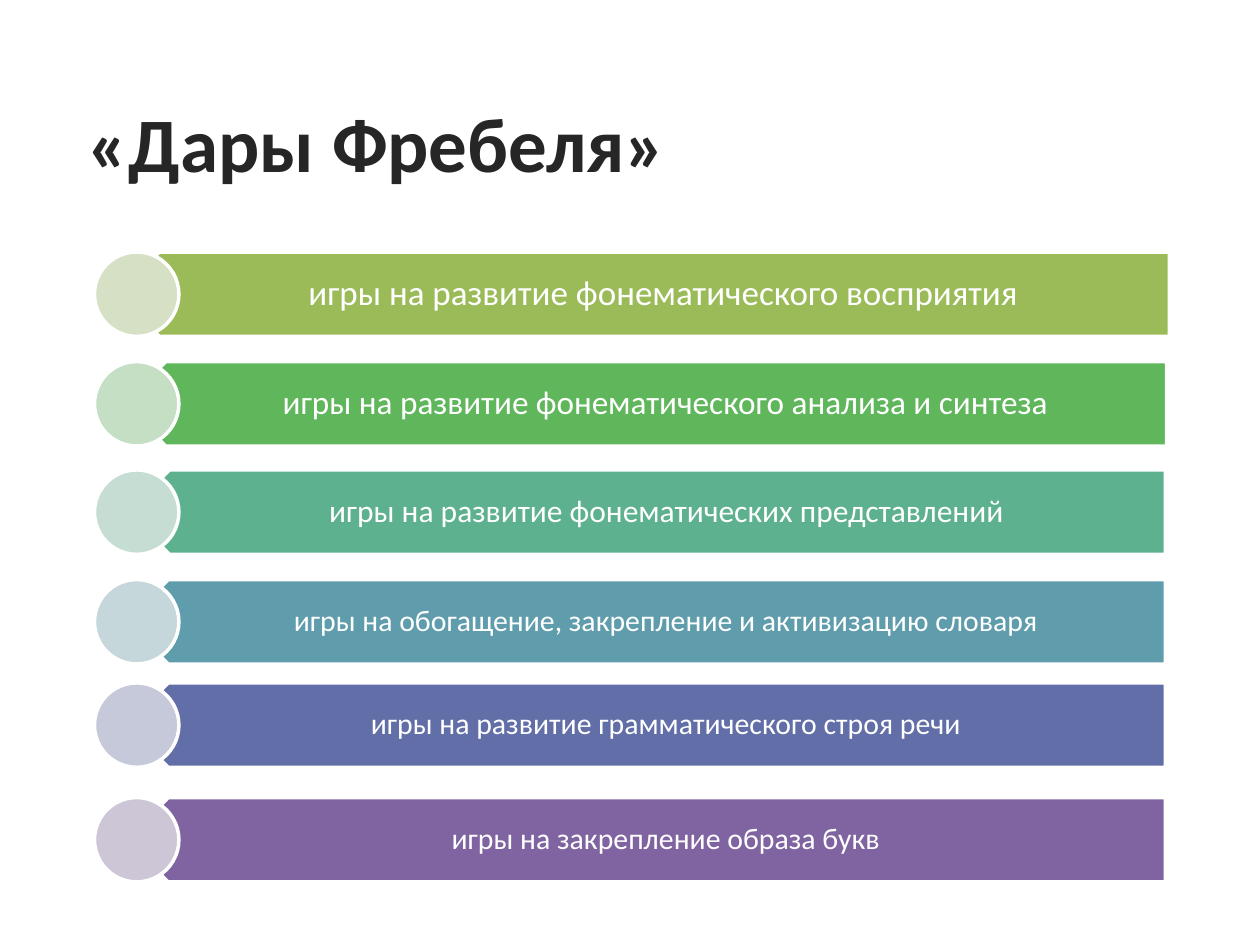
import pptx
import pptx.util
import pptx.dml.color
import pptx.enum.shapes
import pptx.enum.text
from pptx.util import Inches

SHAPES = pptx.enum.shapes.MSO_SHAPE
CENTER = pptx.enum.text.PP_ALIGN.CENTER
MIDDLE = pptx.enum.text.MSO_ANCHOR.MIDDLE


def color(value):
    return pptx.dml.color.RGBColor.from_string(value)


def write(box, text, size, ink, bold, margins):
    frame = box.text_frame
    sides = ("margin_left", "margin_top", "margin_right", "margin_bottom")
    settings = {side: Inches(gap) for side, gap in zip(sides, margins)}
    settings.update(word_wrap=True, vertical_anchor=MIDDLE)
    for name, value in settings.items():
        setattr(frame, name, value)
    para = frame.paragraphs[0]
    para.alignment = CENTER
    span = para.add_run()
    span.text = text
    styles = {"name": "Calibri", "size": pptx.util.Pt(size), "bold": bold}
    for name, value in styles.items():
        setattr(span.font, name, value)
    span.font.color.rgb = color(ink)
    return para


deck = pptx.Presentation()
deck.slide_width, deck.slide_height = Inches(10), Inches(7.5)
page = deck.slides.add_slide(deck.slide_layouts[5])

# Title
title = page.shapes.title
place = {"left": 0.08, "top": 0.5, "width": 5.83, "height": 1.25}
for name, value in place.items():
    setattr(title, name, Inches(value))
write(title, "«Дары Фребеля»", 44, "262626", True, (0.1, 0.05, 0.1, 0.05))

# Rows: text, size, top, bar left, bar right, bar colour, circle colour
rows = [
    ("игры на развитие фонематического восприятия", 20, 2, 0.93, 9.28, "9BBB59", "D5E0C4"),
    ("игры на развитие фонематического анализа и синтеза", 19, 2.87, 0.98, 9.26, "5FB65B", "C4DFC4"),
    ("игры на развитие фонематических представлений", 18, 3.73, 1.01, 9.25, "5DB18E", "C5DDD3"),
    ("игры на обогащение, закрепление и активизацию словаря", 17, 4.6, 1, 9.25, "5F9DAC", "C5D7DB"),
    ("игры на развитие грамматического строя речи", 17, 5.42, 1, 9.25, "626EA7", "C5C9D9"),
    ("игры на закрепление образа букв", 17, 6.33, 1, 9.25, "8064A2", "CDC6D7"),
]
height = 0.67
indent = 0.17

for text, size, top, left, right, bar_fill, circle_fill in rows:
    # Bar pointing left, its label, and the circle over its tip
    bar = page.shapes.add_shape(SHAPES.PENTAGON, Inches(left), Inches(top),
                                Inches(right - left), Inches(height))
    bar.rotation = 180
    label = page.shapes.add_textbox(Inches(left + indent), Inches(top),
                                    Inches(right - left - indent), Inches(height))
    para = write(label, text, size, "FFFFFF", False, (0.29, 0.07, 0.14, 0.07))
    para.line_spacing = 0.9
    circle = page.shapes.add_shape(SHAPES.OVAL, Inches(0.75), Inches(top),
                                   Inches(height), Inches(height))
    for shape, fill in ((bar, bar_fill), (circle, circle_fill)):
        shape.shadow.inherit = False
        shape.fill.solid()
        shape.fill.fore_color.rgb = color(fill)
        shape.line.color.rgb = color("FFFFFF")
        shape.line.width = pptx.util.Pt(2)

deck.save("out.pptx")
